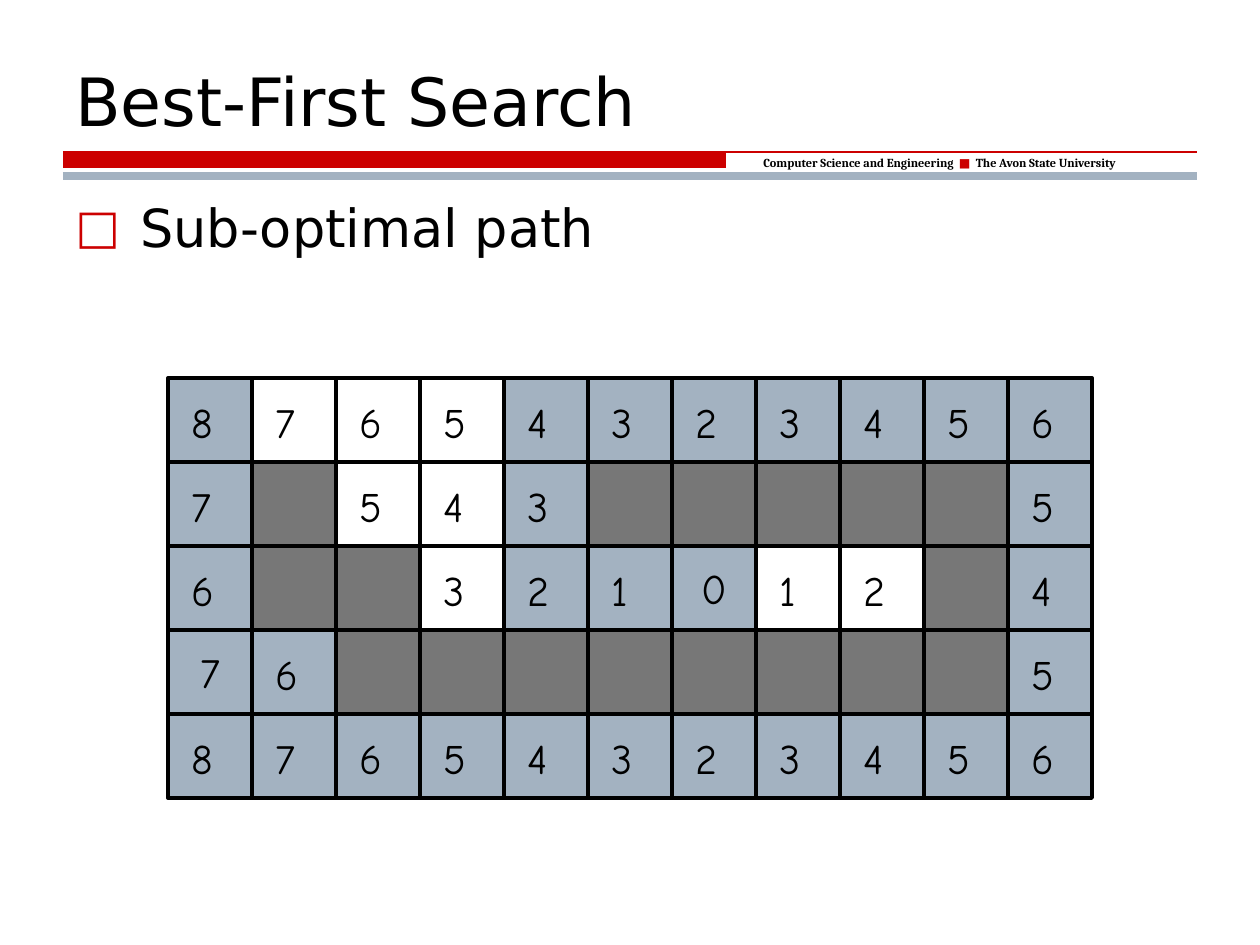
from lxml import etree
from pptx import Presentation
from pptx.dml.color import RGBColor
from pptx.enum.shapes import MSO_CONNECTOR, MSO_SHAPE
from pptx.enum.text import MSO_ANCHOR, PP_ALIGN
from pptx.oxml.ns import qn
from pptx.util import Pt

PX = 914400 // 126
RECT, LINE = MSO_SHAPE.RECTANGLE, MSO_CONNECTOR.STRAIGHT
TOP, MID, LOW = MSO_ANCHOR.TOP, MSO_ANCHOR.MIDDLE, MSO_ANCHOR.BOTTOM
LEFT, MIDDLE = PP_ALIGN.LEFT, PP_ALIGN.CENTER
RED, STEEL, GREY, BLACK = "CC0000", "A3B2C1", "777777", "000000"
SANS, SERIF, HAND = "DejaVu Sans", "Cambria", "Comic Neue"
hue = RGBColor.from_string

deck = Presentation()
deck.slide_width, deck.slide_height = 1260 * PX, 945 * PX
slide = deck.slides.add_slide(deck.slide_layouts[6])
shapes = slide.shapes


def block(x, y, w, h, fill, edge):
    """Add a rectangle; no fill or no edge when the value is empty."""
    rect = shapes.add_shape(RECT, x * PX, y * PX, w * PX, h * PX)
    rect.shadow.inherit = False
    if fill:
        rect.fill.solid()
        rect.fill.fore_color.rgb = hue(fill)
    else:
        rect.fill.background()
    if edge:
        rect.line.color.rgb = hue(BLACK)
        rect.line.width = Pt(edge)
    else:
        rect.line.fill.background()
    return rect


def write(shape, runs, size, wrap=False, anchor=TOP, align=LEFT):
    """Put runs of (words, font, colour, bold) into one paragraph."""
    frame = shape.text_frame
    look = {"word_wrap": wrap, "vertical_anchor": anchor}
    for key, val in look.items():
        setattr(frame, key, val)
    para = frame.paragraphs[0]
    para.alignment = align
    for words, face, tone, bold in runs:
        run = para.add_run()
        run.text = words
        run.font.color.rgb = hue(tone)
        style = {"name": face, "size": Pt(size), "bold": bold}
        for key, val in style.items():
            setattr(run.font, key, val)
    return para


# Search grid: distance to the goal, # for a wall
CELL, LEFT_X, TOP_Y = 84, 168, 378
ROWS = ["87654323456",
        "7#543#####5",
        "6##321012#4",
        "76########5",
        "87654323456"]
# Cells that stay white, and the start and goal, as (row, column)
PLAIN = {(0, 1), (0, 2), (0, 3), (1, 2), (1, 3), (2, 3), (2, 7), (2, 8)}
ENDS = {(3, 0), (2, 6)}
wide, tall = CELL * len(ROWS[0]), CELL * len(ROWS)
end_x, end_y = LEFT_X + wide, TOP_Y + tall
cells = [(row, col, mark) for row, marks in enumerate(ROWS)
         for col, mark in enumerate(marks)]

# Red bar, tinted cells and walls, grid frame
block(63, 152, 663, 16, RED, 0)
for row, col, mark in cells:
    if (row, col) not in PLAIN | ENDS:
        fill, edge = (GREY, 2.25) if mark == "#" else (STEEL, 0.75)
        block(LEFT_X + col * CELL, TOP_Y + row * CELL, CELL, CELL, fill, edge)
block(LEFT_X, TOP_Y, wide, tall, "", 2.25)

# Header rules and grid lines
lines = [(63, 152, 1197, 152, RED, 0.75), (63, 176, 1197, 176, STEEL, 4.5)]
lines += [(x, TOP_Y, x, end_y, BLACK, 2.25)
          for x in range(LEFT_X + CELL, end_x, CELL)]
lines += [(LEFT_X, y, end_x, y, BLACK, 2.25)
          for y in range(TOP_Y + CELL, end_y, CELL)]
for x1, y1, x2, y2, tone, width in lines:
    rule = shapes.add_connector(LINE, x1 * PX, y1 * PX, x2 * PX, y2 * PX)
    rule.line.color.rgb = hue(tone)
    rule.line.width = Pt(width)
    etree.SubElement(rule.element.spPr, qn("a:effectLst"))

# Distances, with start and goal centred in their own cells
for row, col, mark in cells:
    x, y = LEFT_X + col * CELL, TOP_Y + row * CELL
    runs = [(mark, HAND, BLACK, False)]
    if (row, col) in ENDS:
        write(block(x, y, CELL, CELL, STEEL, 2.25), runs, 24,
              anchor=MID, align=MIDDLE)
    elif mark != "#":
        w = 44 if mark == "1" else 50
        box = shapes.add_textbox((x + 11) * PX, (y + 12) * PX, w * PX, 63 * PX)
        write(box, runs, 24)

# Header credit
box = shapes.add_textbox(751 * PX, 149 * PX, 430 * PX, 28 * PX)
write(box, [("Computer Science and Engineering  ", SERIF, BLACK, True),
            ("■", SANS, RED, False),
            ("  The Avon State University", SERIF, BLACK, True)], 7)

# Title
box = shapes.add_textbox(63 * PX, 32 * PX, 1134 * PX, 114 * PX)
write(box, [("Best-First Search", SANS, BLACK, False)], 38, True, LOW)

# Bullet text
box = shapes.add_textbox(63 * PX, 189 * PX, 1134 * PX, 724 * PX)
para = write(box, [("Sub-optimal path", SANS, BLACK, False)], 30, True)
props = para._p.get_or_add_pPr()
props.set("marL", str(65 * PX))
props.set("indent", str(-65 * PX))
for outer, inner, val in [("spcBef", "spcPct", "20000"),
                          ("buClr", "srgbClr", RED)]:
    part = etree.SubElement(props, qn("a:" + outer))
    etree.SubElement(part, qn("a:" + inner)).set("val", val)
for tag, key, val in [("buSzPct", "val", "90000"),
                      ("buFont", "typeface", SANS),
                      ("buChar", "char", "□")]:
    etree.SubElement(props, qn("a:" + tag)).set(key, val)

deck.save("out.pptx")
